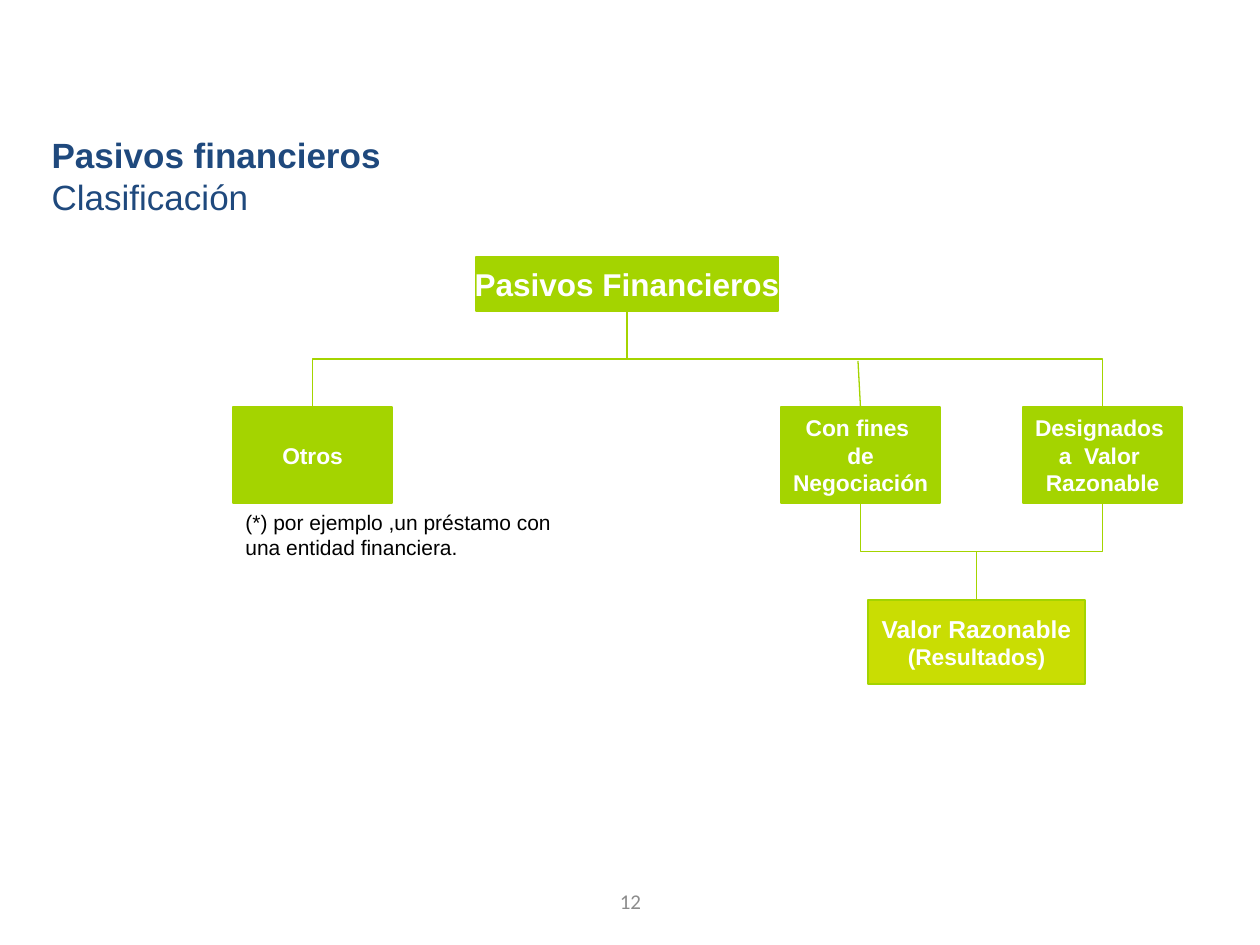
"""Build the slide that classifies financial liabilities as a tree."""
from dataclasses import dataclass

from lxml.etree import SubElement
from pptx import Presentation
from pptx.dml.color import RGBColor
from pptx.enum.shapes import MSO_CONNECTOR, MSO_SHAPE
from pptx.enum.text import MSO_ANCHOR, MSO_AUTO_SIZE, PP_ALIGN
from pptx.oxml.ns import qn
from pptx.util import Emu, Pt

EMU_PER_PX = 914400 / 126


def px(length):
    return Emu(round(length * EMU_PER_PX))


@dataclass(frozen=True)
class Theme:
    navy: str = "1F497D"
    green: str = "A4D400"
    lime: str = "C9DD03"
    white: str = "FFFFFF"
    black: str = "000000"
    grey: str = "8C8C8C"
    heading: int = 20
    root: int = 18
    result: int = 14
    category: int = 13
    note: int = 12
    border: float = 1.5
    branch: float = 0.75
    font: str = "Arial"
    number_font: str = "Calibri"


class SlideBuilder:
    def __init__(self, slide, theme):
        self.slide = slide
        self.theme = theme

    def style(self, run, size, color, bold=False, font=None):
        run.font.name = font or self.theme.font
        run.font.size = Pt(size)
        run.font.bold = bold
        run.font.color.rgb = RGBColor.from_string(color)

    def title(self, heading, subheading, left, top, width, height):
        title = self.slide.shapes.title
        title.left, title.top, title.width, title.height = map(px, (left, top, width, height))
        frame = title.text_frame
        frame.vertical_anchor = MSO_ANCHOR.MIDDLE
        frame.auto_size = MSO_AUTO_SIZE.SHAPE_TO_FIT_TEXT
        paragraph = frame.paragraphs[0]
        paragraph.text = f"{heading}\v{subheading}"
        paragraph.alignment = PP_ALIGN.LEFT
        line_break = paragraph._p.find(qn("a:br"))
        SubElement(line_break, qn("a:rPr"), sz=str(self.theme.heading * 100))
        for run, bold in zip(paragraph.runs, (True, False)):
            self.style(run, self.theme.heading, self.theme.navy, bold)

    def text(self, words, left, top, width, height, color, font=None,
             align=PP_ALIGN.LEFT, anchor=MSO_ANCHOR.TOP):
        box = self.slide.shapes.add_textbox(*map(px, (left, top, width, height)))
        frame = box.text_frame
        frame.word_wrap = True
        frame.vertical_anchor = anchor
        frame.text = words
        for paragraph in frame.paragraphs:
            paragraph.alignment = align
            for run in paragraph.runs:
                self.style(run, self.theme.note, color, font=font)

    def node(self, words, left, top, width, height, sizes, fill):
        node = self.slide.shapes.add_shape(
            MSO_SHAPE.RECTANGLE, *map(px, (left, top, width, height)))
        node.shadow.inherit = False
        node.fill.solid()
        node.fill.fore_color.rgb = RGBColor.from_string(fill)
        node.line.color.rgb = RGBColor.from_string(self.theme.green)
        node.line.width = Pt(self.theme.border)
        frame = node.text_frame
        frame.word_wrap = False
        frame.vertical_anchor = MSO_ANCHOR.MIDDLE
        frame.margin_left = frame.margin_right = px(2)
        frame.margin_top = frame.margin_bottom = px(2)
        frame.text = words
        for paragraph, size in zip(frame.paragraphs, sizes):
            paragraph.alignment = PP_ALIGN.CENTER
            for run in paragraph.runs:
                self.style(run, size, self.theme.white, bold=True)
        return node

    def connector(self, kind, begin_x, begin_y, end_x, end_y):
        line = self.slide.shapes.add_connector(
            kind, *map(Emu, (begin_x, begin_y, end_x, end_y)))
        line.line.color.rgb = RGBColor.from_string(self.theme.green)
        line.line.width = Pt(self.theme.branch)
        SubElement(line._element.spPr, qn("a:effectLst"))
        return line

    def elbow(self, parent, child):
        """Run down from the parent, across and down to the child."""
        start_x = parent.left + parent.width // 2
        end_x = child.left + child.width // 2
        start_y, end_y = parent.top + parent.height, child.top
        center_x, center_y = (start_x + end_x) // 2, (start_y + end_y) // 2
        rightward = end_x > start_x
        half_drop = (end_y - start_y) // 2 * (-1 if rightward else 1)
        half_span = abs(end_x - start_x) // 2
        line = self.connector(
            MSO_CONNECTOR.ELBOW, center_x - half_drop, center_y - half_span,
            center_x + half_drop, center_y + half_span)
        line._element.spPr.xfrm.set("rot", str((270 if rightward else 90) * 60000))

    def drop(self, x, y, child):
        line = self.connector(
            MSO_CONNECTOR.STRAIGHT, px(x), px(y), child.left + child.width // 2, child.top)
        line.end_connect(child, 0)


def main():
    theme = Theme()
    presentation = Presentation()
    presentation.slide_width, presentation.slide_height = px(1260), px(945)
    slide = presentation.slides.add_slide(presentation.slide_layouts[5])
    builder = SlideBuilder(slide, theme)

    builder.title("Pasivos financieros", "Clasificación", 39, 127, 1134, 97)
    builder.text("12", 431, 876, 399, 50, theme.grey, theme.number_font,
                 PP_ALIGN.CENTER, MSO_ANCHOR.MIDDLE)

    liabilities = builder.node("Pasivos Financieros", 476, 257, 302, 54,
                               [theme.root], theme.green)
    others, trading, designated = (
        builder.node(words, left, 407, 159, 96, [theme.category] * 3, theme.green)
        for words, left in (
            ("Otros", 233),
            ("Con fines \nde\nNegociación", 781),
            ("Designados \na  Valor \nRazonable", 1023),
        )
    )
    fair_value = builder.node("Valor Razonable\n(Resultados)", 868, 600, 217, 84,
                              [theme.result, theme.category], theme.lime)

    for parent, child in (
        (liabilities, others),
        (liabilities, designated),
        (trading, fair_value),
        (designated, fair_value),
    ):
        builder.elbow(parent, child)
    builder.drop(858, 361, trading)

    builder.text("(*) por ejemplo ,un préstamo con\nuna entidad financiera.",
                 233, 503, 344, 66, theme.black)

    presentation.save("out.pptx")


if __name__ == "__main__":
    main()
